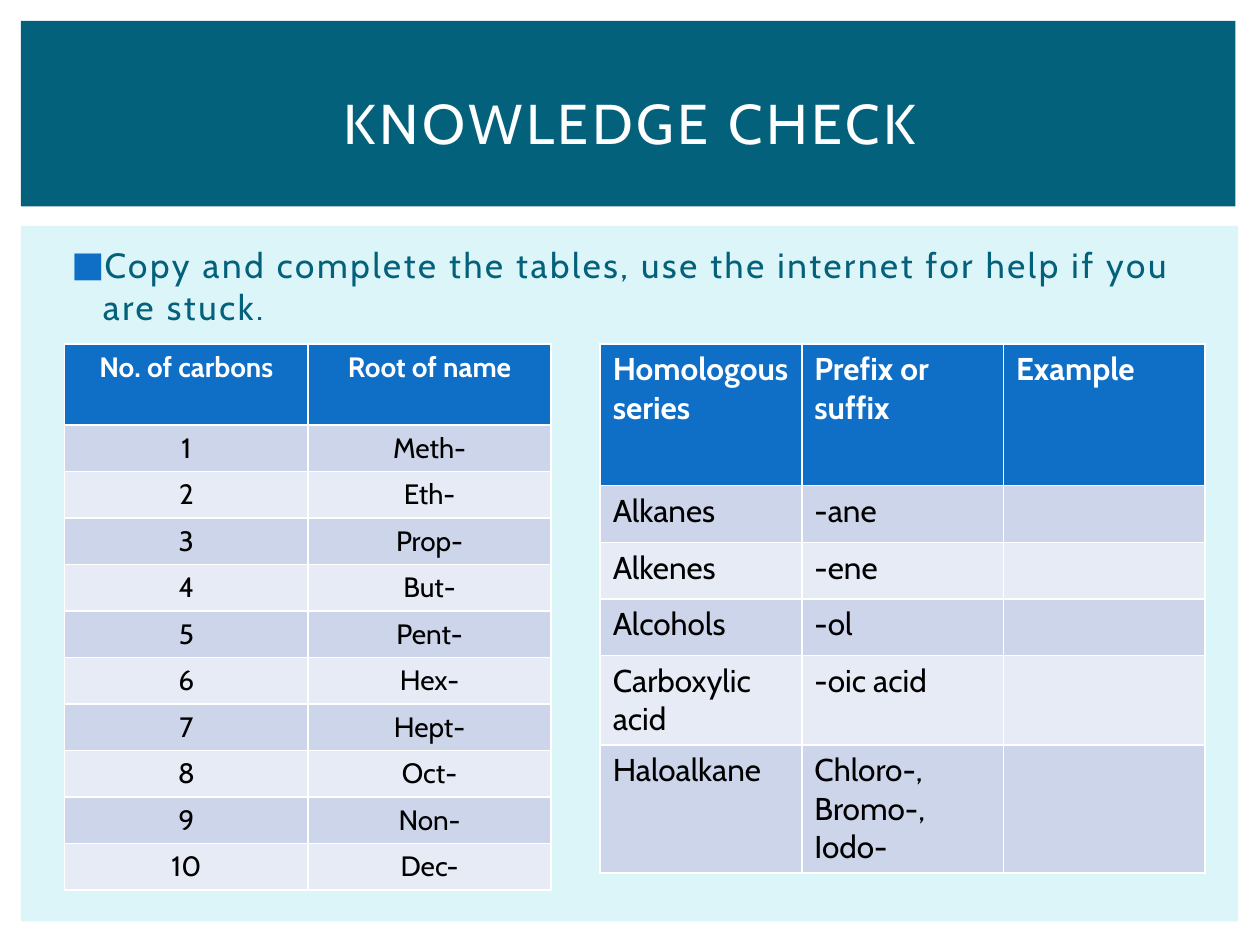
from dataclasses import dataclass

from lxml.etree import SubElement
from pptx import Presentation
from pptx.dml.color import RGBColor
from pptx.enum.shapes import MSO_SHAPE as Shape
from pptx.enum.text import MSO_ANCHOR as Anchor, MSO_AUTO_SIZE as AutoSize, PP_ALIGN as Align
from pptx.oxml.ns import qn
from pptx.util import Pt

TITLE = "KNOWLEDGE CHECK"
TASK = "Copy and complete the tables, use the internet for help if you are stuck."
ROOTS = ["Meth-", "Eth-", "Prop-", "But-", "Pent-", "Hex-", "Hept-", "Oct-", "Non-", "Dec-"]
CARBON_ROWS = [("No. of carbons", "Root of name")] + [
    (str(count), root) for count, root in enumerate(ROOTS, 1)
]
SERIES_ROWS = [
    ("Homologous series", "Prefix or suffix", "Example"),
    ("Alkanes", "-ane", ""),
    ("Alkenes", "-ene", ""),
    ("Alcohols", "-ol", ""),
    ("Carboxylic acid", "-oic acid", ""),
    ("Haloalkane", "Chloro-, Bromo-, Iodo-", ""),
]


@dataclass(frozen=True)
class Theme:
    """Colours, font and type sizes of the slide."""

    font: str = "Cabin"
    white: str = "FFFFFF"
    black: str = "000000"
    teal: str = "04617B"
    pale: str = "DBF5F9"
    blue: str = "0F6FC6"
    bands: tuple = ("CCD5EA", "E7EBF5")
    title_size: int = 32
    task_size: int = 20
    carbon_size: int = 16
    series_size: int = 18


THEME = Theme()


def paint(fill, color):
    """Give a fill one solid colour."""
    fill.solid()
    fill.fore_color.rgb = RGBColor.from_string(color)


def style_text(para, size, color, bold=False, spacing=0):
    """Format every run of a paragraph."""
    for run in para.runs:
        run.font.name = THEME.font
        run.font.size = Pt(size)
        run.font.bold = bold
        run.font.color.rgb = RGBColor.from_string(color)
        if spacing:
            run.font._element.set("spc", str(int(spacing * 100)))


def add_panel(slide, layer, bounds, color):
    """Add a plain rectangle behind the placeholders."""
    panel = slide.shapes.add_shape(Shape.RECTANGLE, *map(Pt, bounds))
    panel.shadow.inherit = False
    paint(panel.fill, color)
    panel.line.fill.background()
    slide.shapes._spTree.insert(2 + layer, panel._element)


def fill_placeholder(box, bounds, text, anchor):
    """Place a placeholder, set its text and return its paragraph."""
    box.left, box.top, box.width, box.height = map(Pt, bounds)
    frame = box.text_frame
    frame.text = text
    frame.word_wrap = True
    frame.auto_size = AutoSize.NONE
    frame.vertical_anchor = anchor
    return frame.paragraphs[0]


def add_square_bullet(para):
    """Give a paragraph a blue square bullet with a hanging indent."""
    properties = para._p.get_or_add_pPr()
    properties.set("marL", str(Pt(21.6)))
    properties.set("indent", str(Pt(-18)))
    color = SubElement(properties, qn("a:buClr"))
    SubElement(color, qn("a:srgbClr"), val=THEME.blue)
    SubElement(properties, qn("a:buFont"), typeface=THEME.font)
    SubElement(properties, qn("a:buChar"), char="■")


def add_grid(slide, rows, left, top, column_width, header_height, row_height, size, align):
    """Add a table with a blue header and banded rows."""
    columns = len(rows[0])
    height = header_height + row_height * (len(rows) - 1)
    table = slide.shapes.add_table(
        len(rows), columns, Pt(left), Pt(top), Pt(column_width * columns), Pt(height)
    ).table
    for column in table.columns:
        column.width = Pt(column_width)
    for index, values in enumerate(rows):
        header = index == 0
        table.rows[index].height = Pt(header_height if header else row_height)
        for cell, value in zip(table.rows[index].cells, values):
            paint(cell.fill, THEME.blue if header else THEME.bands[(index - 1) % 2])
            cell.text_frame.text = value
            para = cell.text_frame.paragraphs[0]
            para.alignment = align
            para.font.size = Pt(size)
            style_text(para, size, THEME.white if header else THEME.black, header)


def main():
    """Build and save the slide."""
    deck = Presentation()
    deck.slide_width, deck.slide_height = Pt(720), Pt(540)
    slide = deck.slides.add_slide(deck.slide_layouts[1])

    add_panel(slide, 0, (12, 129, 695.5, 397.5), THEME.pale)
    add_panel(slide, 1, (12, 12, 694, 106), THEME.teal)

    title = fill_placeholder(slide.shapes.title, (30, 28, 660, 83), TITLE, Anchor.MIDDLE)
    title.alignment = Align.CENTER
    style_text(title, THEME.title_size, THEME.white, spacing=2)

    task = fill_placeholder(slide.placeholders[1], (30, 135.5, 662, 61), TASK, Anchor.TOP)
    add_square_bullet(task)
    style_text(task, THEME.task_size, THEME.teal, spacing=1.5)

    add_grid(slide, CARBON_ROWS, 37, 196.5, 139, 46.5, 26.5, THEME.carbon_size, Align.CENTER)
    add_grid(slide, SERIES_ROWS, 343, 196.5, 115.2, 81, 32.4, THEME.series_size, Align.LEFT)

    deck.save("out.pptx")


if __name__ == "__main__":
    main()
